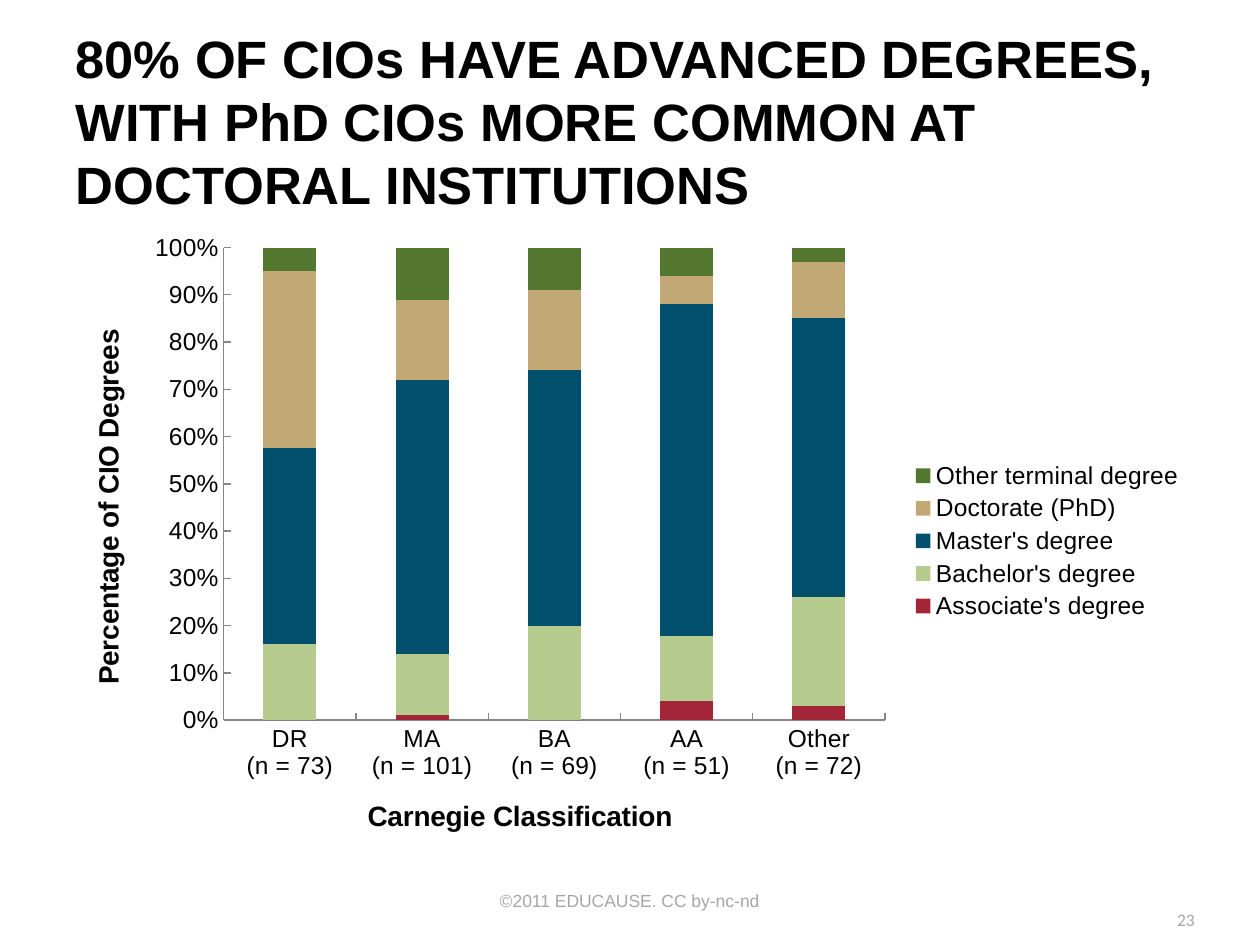
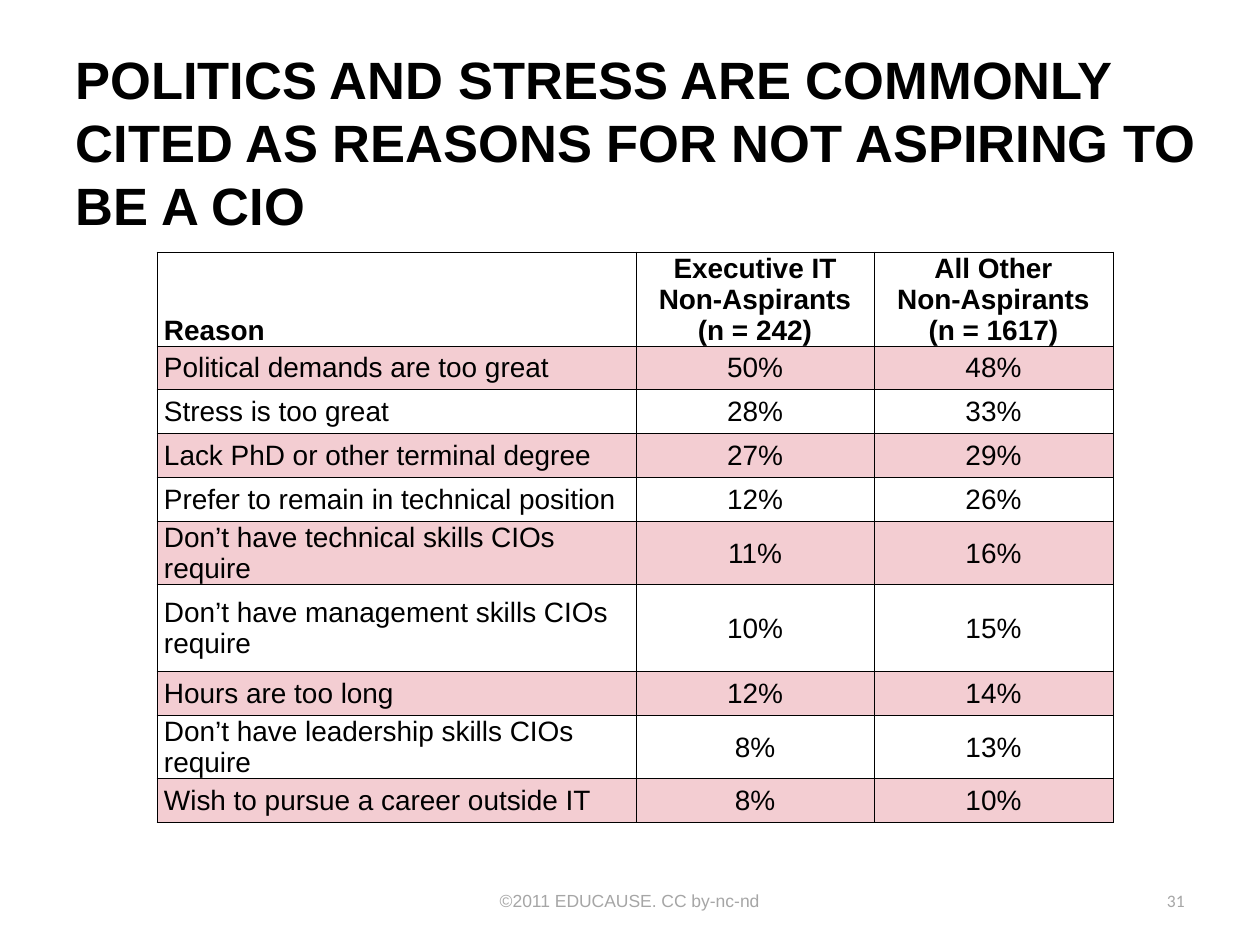
import pptx
import pptx.chart.data
import pptx.dml.color
import pptx.enum.chart
import pptx.enum.text
import pptx.oxml
import pptx.oxml.ns
import pptx.util

PX = 914400 / 126
BLACK, GREY, PINK, WHITE = "000000", "A6A6A6", "F3CDD2", "FFFFFF"
ALIGN = pptx.enum.text.PP_ALIGN
ANCHOR = pptx.enum.text.MSO_ANCHOR


def px(n):
    return pptx.util.Emu(round(n * PX))


def rgb(color):
    return pptx.dml.color.RGBColor.from_string(color)


class Deck:
    """Hold the shared style and the current slide, and draw each kind of element."""

    def __init__(self):
        self.prs = pptx.Presentation()
        self.prs.slide_width, self.prs.slide_height = px(1260), px(945)
        self.font = "Arial"

    def style(self, font, size, color=BLACK, bold=False, name=None):
        font.name, font.size, font.bold = name or self.font, pptx.util.Pt(size), bold
        font.color.rgb = rgb(color)

    def run(self, p, text, size, color=BLACK, bold=False, name=None):
        r = p.add_run()
        r.text = text
        self.style(r.font, size, color, bold, name)

    def slide(self, title, top, width, number, number_at):
        self.s = self.prs.slides.add_slide(self.prs.slide_layouts[5])
        self.title(title, top, width)
        self.footer("©2011 EDUCAUSE. CC by-nc-nd", (430, 876, 399, 50), ALIGN.CENTER)
        self.footer(number, (*number_at, 294, 50), ALIGN.RIGHT, "Calibri")

    def title(self, text, top, width):
        sp = self.s.shapes.title
        sp.left, sp.top, sp.width, sp.height = map(px, (63, top, width, 158))
        tf = sp.text_frame
        tf.auto_size = pptx.enum.text.MSO_AUTO_SIZE.NONE
        tf.vertical_anchor, tf.word_wrap = ANCHOR.MIDDLE, True
        p = tf.paragraphs[0]
        p.alignment = ALIGN.LEFT
        self.run(p, text, 30, bold=True)

    def footer(self, text, box, align, name=None):
        tf = self.s.shapes.add_textbox(*map(px, box)).text_frame
        tf.word_wrap, tf.vertical_anchor = True, ANCHOR.MIDDLE
        p = tf.paragraphs[0]
        p.alignment = align
        self.run(p, text, 10, GREY, name=name)

    def axis(self, axis, title):
        axis.has_major_gridlines = False
        axis.major_tick_mark = pptx.enum.chart.XL_TICK_MARK.INSIDE
        axis.format.line.color.rgb = rgb("868686")
        axis.format.line.width = pptx.util.Pt(0.75)
        self.style(axis.tick_labels.font, 14)
        self.run(axis.axis_title.text_frame.paragraphs[0], title, 16, bold=True)

    def stacked_chart(self, box, cats, series, cat_title, val_title):
        data = pptx.chart.data.CategoryChartData()
        data.categories = cats
        for name, color, vals in series:
            data.add_series(name, vals)
        kind = pptx.enum.chart.XL_CHART_TYPE.COLUMN_STACKED_100
        chart = self.s.shapes.add_chart(kind, *map(px, box), data).chart
        self.style(chart.font, 16)
        chart.has_title = False
        plot = chart.plots[0]
        plot.gap_width, plot.overlap, plot.vary_by_categories = 150, 100, False
        for ser, (name, color, vals) in zip(plot.series, series):
            ser.format.fill.solid()
            ser.format.fill.fore_color.rgb = rgb(color)
        self.axis(chart.category_axis, cat_title)
        self.axis(chart.value_axis, val_title)
        chart.value_axis.maximum_scale = 1
        chart.value_axis.major_unit = 0.1
        chart.value_axis.tick_labels.number_format = "0%"
        chart.value_axis.tick_labels.number_format_is_linked = False
        chart.has_legend = True
        chart.legend.position = pptx.enum.chart.XL_LEGEND_POSITION.RIGHT
        chart.legend.include_in_layout = False
        self.style(chart.legend.font, 14)

    def borders(self, cell):
        tcPr = cell._tc.get_or_add_tcPr()
        for side in ("lnL", "lnR", "lnT", "lnB"):
            tcPr.append(pptx.oxml.parse_xml(
                f'<a:{side} {pptx.oxml.ns.nsdecls("a")} w="6350"><a:solidFill>'
                f'<a:srgbClr val="{BLACK}"/></a:solidFill></a:{side}>'))

    def cell(self, cell, text, header, first, fill):
        cell.margin_left = px(7 if first else 1)
        cell.margin_right = cell.margin_top = px(1)
        cell.margin_bottom = 0
        cell.vertical_anchor = ANCHOR.BOTTOM if header else ANCHOR.MIDDLE
        self.borders(cell)
        if fill:
            cell.fill.solid()
            cell.fill.fore_color.rgb = rgb(fill)
        else:
            cell.fill.background()
        tf = cell.text_frame
        for i, line in enumerate(text.split("\n")):
            p = tf.add_paragraph() if i else tf.paragraphs[0]
            p.alignment = ALIGN.LEFT if first else ALIGN.CENTER
            p.line_spacing = pptx.util.Pt(17.7)
            self.run(p, line, 16, bold=header)

    def table(self, left, top, widths, heights, rows):
        box = map(px, (left, top, sum(widths), sum(heights)))
        table = self.s.shapes.add_table(len(rows), len(widths), *box).table
        table.first_row = table.horz_banding = False
        for col, width in zip(table.columns, widths):
            col.width = px(width)
        for i, (height, row) in enumerate(zip(heights, rows)):
            table.rows[i].height = px(height)
            fill = (WHITE, PINK)[i % 2] if i else None
            for j, text in enumerate(row):
                self.cell(table.cell(i, j), text, i == 0, j == 0, fill)


def main():
    deck = Deck()
    deck.slide("80% OF CIOs HAVE ADVANCED DEGREES, WITH PhD CIOs MORE COMMON AT "
               "DOCTORAL INSTITUTIONS", 42, 1134, "23", (913, 895))
    groups = {"DR": 73, "MA": 101, "BA": 69, "AA": 51, "Other": 72}
    degrees = [
        ("Associate's degree", "A32638", (0, 1, 0, 4, 3)),
        ("Bachelor's degree", "B5CC8E", (16, 13, 20, 14, 23)),
        ("Master's degree", "004F6D", (41, 58, 54, 71, 59)),
        ("Doctorate (PhD)", "C1A875", (37, 17, 17, 6, 12)),
        ("Other terminal degree", "547730", (5, 11, 9, 6, 3)),
    ]
    deck.stacked_chart((63, 221, 1134, 640),
                       [f"{name}\n(n = {n})" for name, n in groups.items()],
                       degrees, "Carnegie Classification", "Percentage of CIO Degrees")

    deck.slide("POLITICS AND STRESS ARE COMMONLY CITED AS REASONS FOR NOT ASPIRING TO "
               "BE A CIO", 63, 1155, "31", (903, 876))
    reasons = [
        ("Reason", "Executive IT\nNon-Aspirants\n(n = 242)",
         "All Other\nNon-Aspirants\n(n = 1617)"),
        ("Political demands are too great", "50%", "48%"),
        ("Stress is too great", "28%", "33%"),
        ("Lack PhD or other terminal degree", "27%", "29%"),
        ("Prefer to remain in technical position", "12%", "26%"),
        ("Don’t have technical skills CIOs require", "11%", "16%"),
        ("Don’t have management skills CIOs require", "10%", "15%"),
        ("Hours are too long", "12%", "14%"),
        ("Don’t have leadership skills CIOs require", "8%", "13%"),
        ("Wish to pursue a career outside IT", "8%", "10%"),
    ]
    heights = [87 if i in (0, 6) else 44 for i in range(len(reasons))]
    deck.table(157, 252, (479, 238, 239), heights, reasons)
    deck.prs.save("out.pptx")


if __name__ == "__main__":
    main()
